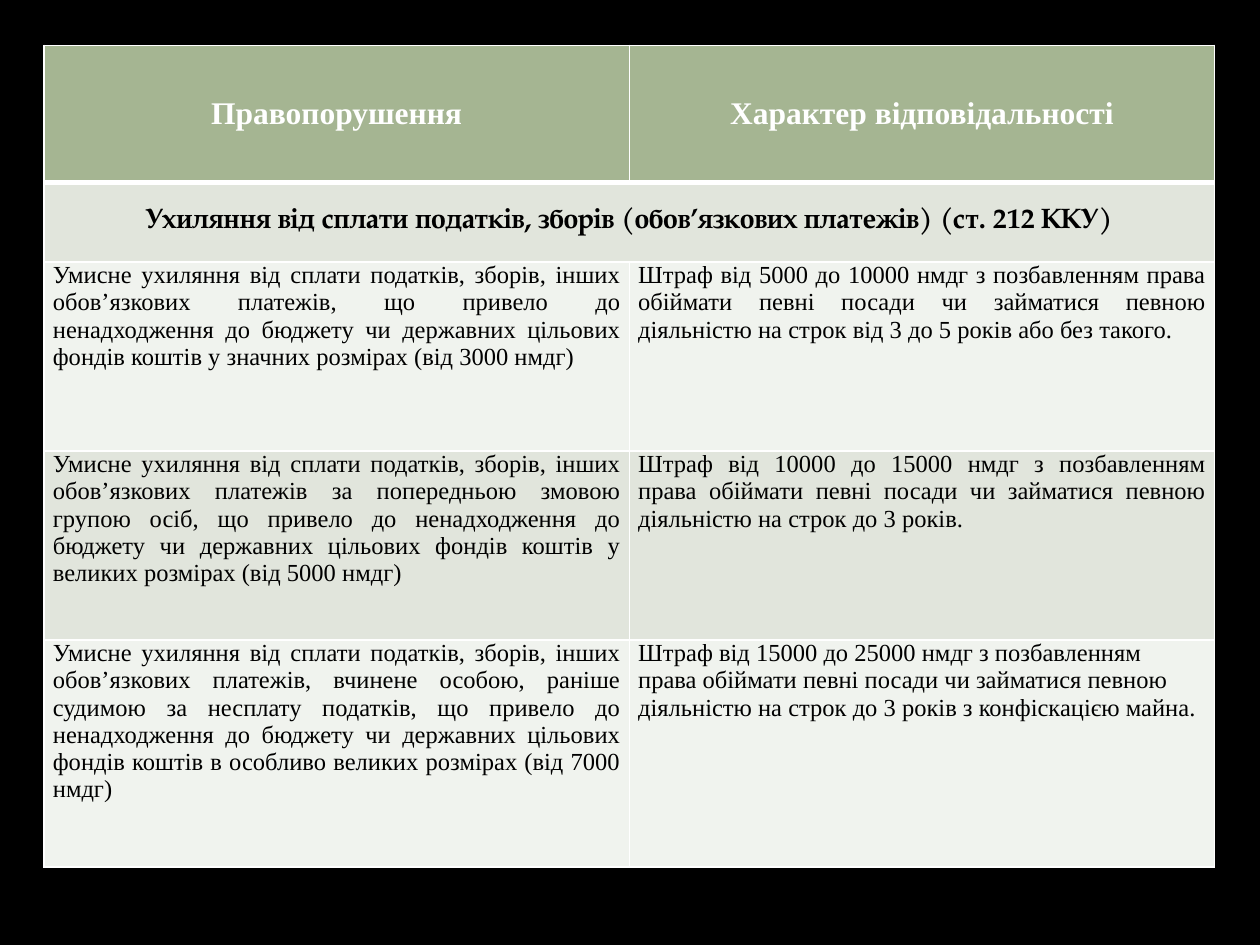
from dataclasses import dataclass

from lxml.etree import SubElement
from pptx import Presentation
from pptx.dml.color import RGBColor
from pptx.enum.text import MSO_ANCHOR, PP_ALIGN
from pptx.oxml.ns import qn
from pptx.util import Inches, Pt


@dataclass(frozen=True)
class Theme:
    """Colours, fonts and type sizes of the slide."""
    background: str = "000000"
    header_fill: str = "A5B592"
    dark_band: str = "E1E5DC"
    light_band: str = "F0F3EE"
    border: str = "FFFFFF"
    header_text: str = "FFFFFF"
    body_text: str = "000000"
    body_font: str = "Times New Roman"
    section_font: str = "TeX Gyre Pagella"
    header_size: int = 18
    section_size: int = 16
    body_size: int = 14


THEME = Theme()
HEADERS = ["Правопорушення", "Характер відповідальності"]
SECTION = "Ухиляння від сплати податків, зборів (обов’язкових платежів) (ст. 212 ККУ)"
OFFENCES = [
    ("Умисне ухиляння від сплати податків, зборів, інших обов’язкових платежів, "
     "що привело до ненадходження до бюджету чи державних цільових фондів коштів "
     "у значних розмірах (від 3000 нмдг)",
     "Штраф від 5000 до 10000 нмдг з позбавленням права обіймати певні посади чи "
     "займатися певною діяльністю на строк від 3 до 5 років або без такого."),
    ("Умисне ухиляння від сплати податків, зборів, інших обов’язкових платежів "
     "за попередньою змовою групою осіб, що привело до ненадходження до бюджету "
     "чи державних цільових фондів коштів у великих розмірах (від 5000 нмдг)",
     "Штраф від 10000 до 15000 нмдг з позбавленням права обіймати певні посади чи "
     "займатися певною діяльністю на строк до 3 років."),
    ("Умисне ухиляння від сплати податків, зборів, інших обов’язкових платежів, "
     "вчинене особою, раніше судимою за несплату податків, що привело до "
     "ненадходження до бюджету чи державних цільових фондів коштів в особливо "
     "великих розмірах (від 7000 нмдг)",
     "Штраф від 15000 до 25000 нмдг з позбавленням права обіймати певні посади чи "
     "займатися певною діяльністю на строк до 3 років з конфіскацією майна."),
]
ROW_HEIGHTS = [1.09, 0.63, 1.5, 1.5, 1.8]


def set_borders(cell, top=1, bottom=1):
    """Draw the four borders of a cell, with widths in points."""
    properties = cell._tc.get_or_add_tcPr()
    widths = {"a:lnL": 1, "a:lnR": 1, "a:lnT": top, "a:lnB": bottom}
    for index, (tag, width) in enumerate(widths.items()):
        line = SubElement(properties, qn(tag), w=str(Pt(width)))
        fill = SubElement(line, qn("a:solidFill"))
        SubElement(fill, qn("a:srgbClr"), val=THEME.border)
        properties.insert(index, line)


def fill_cell(cell, text, fill, size, color=THEME.body_text, font=THEME.body_font,
              bold=False, align=PP_ALIGN.CENTER, anchor=MSO_ANCHOR.MIDDLE):
    """Write and style one cell."""
    cell.fill.solid()
    cell.fill.fore_color.rgb = RGBColor.from_string(fill)
    cell.vertical_anchor = anchor
    cell.text = text
    paragraph = cell.text_frame.paragraphs[0]
    paragraph.alignment = align
    paragraph.font.name = font
    paragraph.font.size = Pt(size)
    paragraph.font.bold = bold
    paragraph.font.color.rgb = RGBColor.from_string(color)


def set_tight_margins(cell):
    """Give a cell narrow sides and no space above or below."""
    cell.margin_left = cell.margin_right = Inches(0.07)
    cell.margin_top = cell.margin_bottom = 0


def add_liability_table(slide, left, top, width, height):
    """Place the table of offences and penalties in the given box."""
    table = slide.shapes.add_table(len(ROW_HEIGHTS), len(HEADERS),
                                   left, top, width, height).table
    for row, row_height in zip(table.rows, ROW_HEIGHTS):
        row.height = Inches(row_height)

    for column, header in enumerate(HEADERS):
        cell = table.cell(0, column)
        set_tight_margins(cell)
        fill_cell(cell, header, THEME.header_fill, THEME.header_size,
                  color=THEME.header_text, bold=True)
        set_borders(cell, bottom=3)

    section = table.cell(1, 0)
    section.merge(table.cell(1, 1))
    fill_cell(section, SECTION, THEME.dark_band, THEME.section_size,
              font=THEME.section_font, bold=True)
    for column in range(len(HEADERS)):
        set_borders(table.cell(1, column), top=3)

    for index, offence in enumerate(OFFENCES):
        band = THEME.dark_band if index % 2 else THEME.light_band
        for column, text in enumerate(offence):
            cell = table.cell(index + 2, column)
            is_last = (index, column) == (len(OFFENCES) - 1, 1)
            set_tight_margins(cell)
            fill_cell(cell, text, band, THEME.body_size, anchor=MSO_ANCHOR.TOP,
                      align=PP_ALIGN.LEFT if is_last else PP_ALIGN.JUSTIFY)
            set_borders(cell)


def main():
    """Build the slide and save it."""
    presentation = Presentation()
    presentation.slide_width = Inches(10)
    presentation.slide_height = Inches(7.5)
    slide = presentation.slides.add_slide(presentation.slide_layouts[6])
    slide.background.fill.solid()
    slide.background.fill.fore_color.rgb = RGBColor.from_string(THEME.background)
    add_liability_table(slide, Inches(0.35), Inches(0.36), Inches(9.29), Inches(6.54))
    presentation.save("out.pptx")


if __name__ == "__main__":
    main()
